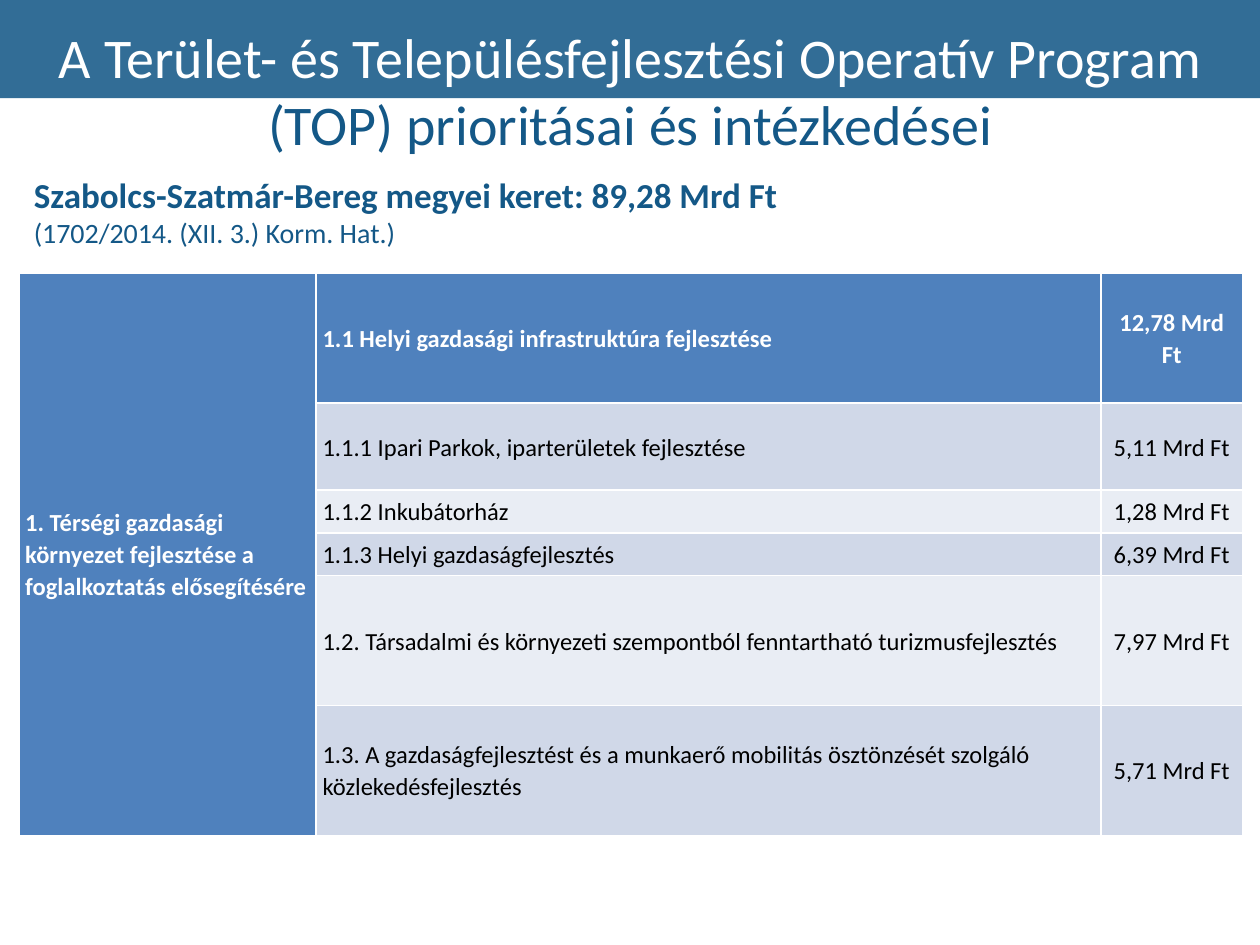
from lxml import etree
from pptx import Presentation
from pptx.dml.color import RGBColor
from pptx.enum import shapes, text
from pptx.oxml import ns
from pptx.util import Inches, Pt

NAVY, WHITE, BLACK = "145887", "FFFFFF", "000000"
HEAD, DARK, LIGHT = "4F81BD", "D0D8E8", "E9EDF4"
FONT = "Calibri"
COLS = [2.36, 6.23, 1.12]
AXIS = "1. Térségi gazdasági környezet fejlesztése a foglalkoztatás elősegítésére"
ROWS = [
    (1.03, "1.1 Helyi gazdasági infrastruktúra fejlesztése", "12,78 Mrd Ft"),
    (0.69, "1.1.1 Ipari Parkok, iparterületek fejlesztése", "5,11 Mrd Ft"),
    (0.34, "1.1.2 Inkubátorház", "1,28 Mrd Ft"),
    (0.34, "1.1.3 Helyi gazdaságfejlesztés", "6,39 Mrd Ft"),
    (1.03, "1.2. Társadalmi és környezeti szempontból fenntartható turizmusfejlesztés", "7,97 Mrd Ft"),
    (1.03, "1.3. A gazdaságfejlesztést és a munkaerő mobilitás ösztönzését szolgáló "
           "közlekedésfejlesztés", "5,71 Mrd Ft"),
]


def rgb(code):
    return RGBColor.from_string(code)


def sub(node, tag, **attrs):
    return etree.SubElement(node, ns.qn(tag), **attrs)


def style(font, size, color, bold=False):
    font.name, font.size, font.bold = FONT, Pt(size), bold
    font.color.rgb = rgb(color)


def add_band(slide):
    """Put the translucent header band behind everything else."""
    band = slide.shapes.add_shape(
        shapes.MSO_SHAPE.RECTANGLE, 0, 0, Inches(10), Inches(0.78))
    band.shadow.inherit = False
    band.line.fill.background()
    band.fill.solid()
    band.fill.fore_color.rgb = rgb(NAVY)
    color = band.fill._xPr.find(".//" + ns.qn("a:srgbClr"))
    sub(color, "a:alpha", val="87000")
    slide.shapes._spTree.insert(2, band._element)


def set_title(slide):
    title = slide.shapes.title
    title.left, title.top = Inches(0.19), Inches(0.13)
    title.width, title.height = Inches(9.63), Inches(1.18)
    frame = title.text_frame
    frame.word_wrap = True
    frame.auto_size = text.MSO_AUTO_SIZE.NONE
    frame.vertical_anchor = text.MSO_ANCHOR.TOP
    para = frame.paragraphs[0]
    para.alignment = text.PP_ALIGN.CENTER
    for words, color in (
            ("A Terület- és Településfejlesztési Operatív Program ", WHITE),
            ("(TOP) prioritásai és intézkedései", NAVY)):
        run = para.add_run()
        run.text = words
        style(run.font, 32, color)


def add_budget(slide):
    box = slide.shapes.add_textbox(
        Inches(0.17), Inches(1.33), Inches(9.83), Inches(0.71))
    frame = box.text_frame
    frame.word_wrap = True
    frame.text = ("Szabolcs-Szatmár-Bereg megyei keret: 89,28 Mrd Ft\n"
                  "(1702/2014. (XII. 3.) Korm. Hat.)")
    for para, size, bold in zip(frame.paragraphs, (20, 16), (True, False)):
        para.alignment = text.PP_ALIGN.JUSTIFY
        style(para.font, size, NAVY, bold)


def edge(cell):
    props = cell._tc.get_or_add_tcPr()
    for side in "LRTB":
        line = sub(props, "a:ln" + side, w=str(Pt(1)))
        sub(sub(line, "a:solidFill"), "a:srgbClr", val=WHITE)


def fill_cell(cell, words, fill, align):
    edge(cell)
    cell.fill.solid()
    cell.fill.fore_color.rgb = rgb(fill)
    cell.margin_left = cell.margin_right = Inches(0.05)
    cell.margin_top = cell.margin_bottom = 0
    cell.vertical_anchor = text.MSO_ANCHOR.MIDDLE
    cell.text = words
    para = cell.text_frame.paragraphs[0]
    para.alignment, para.line_spacing = align, 1.07
    head = fill == HEAD
    style(para.font, 14, WHITE if head else BLACK, head)


def add_grid(slide):
    grid = slide.shapes.add_table(
        len(ROWS), len(COLS), Inches(0.15), Inches(2.17),
        Inches(sum(COLS)), Inches(sum(row[0] for row in ROWS))).table
    for col, width in zip(grid.columns, COLS):
        col.width = Inches(width)
    left, center = text.PP_ALIGN.LEFT, text.PP_ALIGN.CENTER
    for i, (height, name, sum_) in enumerate(ROWS):
        grid.rows[i].height = Inches(height)
        fill = HEAD if i == 0 else DARK if i % 2 else LIGHT
        fill_cell(grid.cell(i, 0), "" if i else AXIS, HEAD, left)
        fill_cell(grid.cell(i, 1), name, fill, left)
        fill_cell(grid.cell(i, 2), sum_, fill, center)
    grid.cell(0, 0).merge(grid.cell(len(ROWS) - 1, 0))


def main():
    deck = Presentation()
    deck.slide_width, deck.slide_height = Inches(10), Inches(7.5)
    slide = deck.slides.add_slide(deck.slide_layouts[5])
    add_band(slide)
    set_title(slide)
    add_budget(slide)
    add_grid(slide)
    deck.save("out.pptx")


if __name__ == "__main__":
    main()
